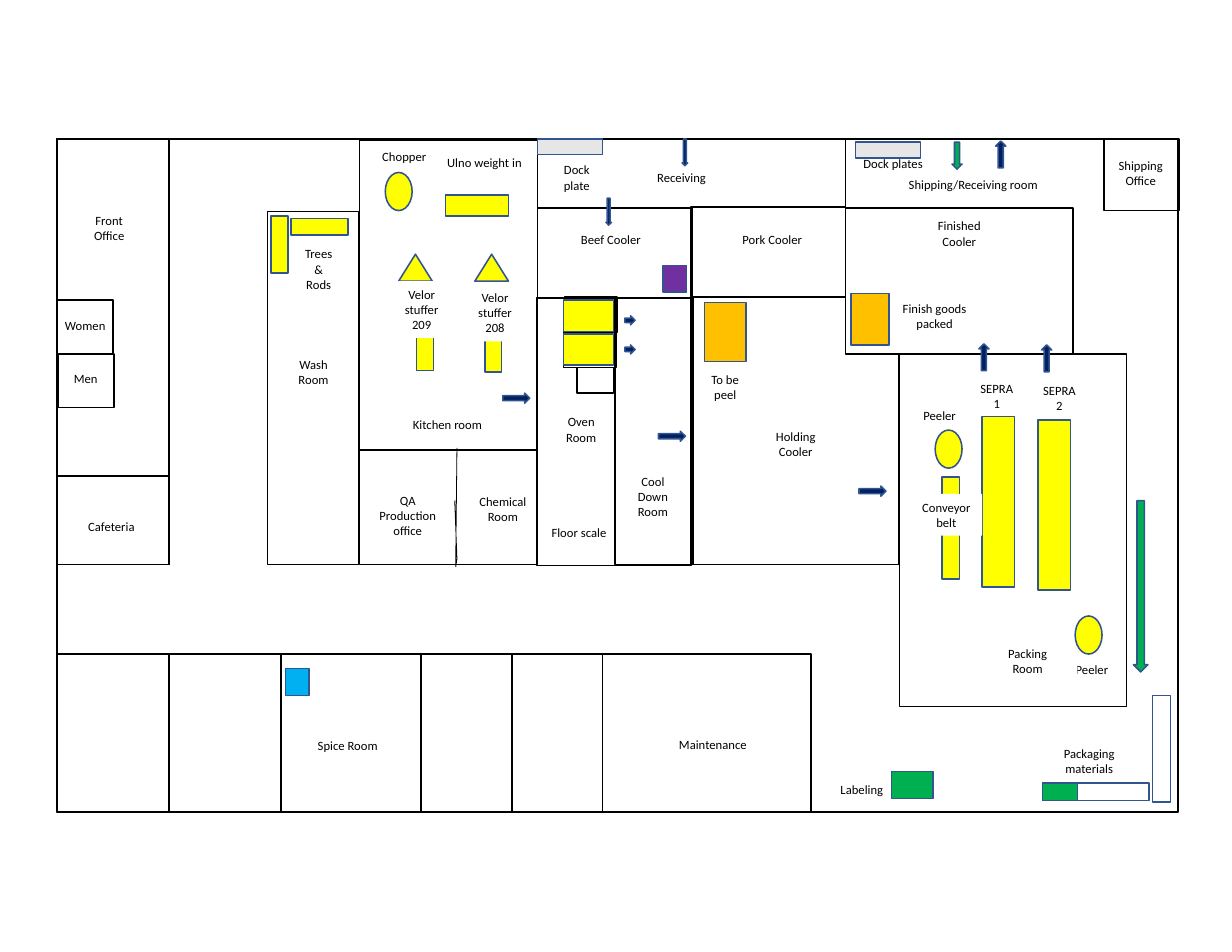
"""Build a one-slide floor plan of a meat plant on a grid of 110 columns by 85 rows."""
from lxml import etree
from pptx import Presentation
from pptx.dml.color import RGBColor
from pptx.enum.shapes import MSO_CONNECTOR, MSO_SHAPE
from pptx.enum.text import MSO_ANCHOR, MSO_AUTO_SIZE, PP_ALIGN
from pptx.oxml.ns import qn
from pptx.util import Inches, Pt

RECTANGLE = MSO_SHAPE.RECTANGLE
ELLIPSE = MSO_SHAPE.OVAL
TRIANGLE = MSO_SHAPE.ISOSCELES_TRIANGLE
DOWN, UP, RIGHT = MSO_SHAPE.DOWN_ARROW, MSO_SHAPE.UP_ARROW, MSO_SHAPE.RIGHT_ARROW
STRAIGHT = MSO_CONNECTOR.STRAIGHT
THEME = {
    "font": "Calibri", "size": Pt(8.1), "wall_width": Pt(1), "thin_width": Pt(0.5),
    "wall": "000000", "outline": "325491", "paper": "FFFFFF",
    "machine": "FFFF00", "goods": "FFC000", "dock": "E7E6E6", "flow": "002060",
    "packaging": "00B050", "bin": "7030A0", "spice": "00B0F0",
}

presentation = Presentation()
presentation.slide_width, presentation.slide_height = Inches(11), Inches(8.5)
slide = presentation.slides.add_slide(presentation.slide_layouts[6])
COLUMN = presentation.slide_width / 110
ROW = presentation.slide_height / 85


def add_block(kind, box, line, fill=None):
    left, top, width, height = box
    shape = slide.shapes.add_shape(
        kind, round(left * COLUMN), round(top * ROW), round(width * COLUMN), round(height * ROW))
    shape.shadow.inherit = False
    if fill:
        shape.fill.solid()
        shape.fill.fore_color.rgb = RGBColor.from_string(THEME[fill])
    else:
        shape.fill.background()
    shape.line.color.rgb = RGBColor.from_string(THEME[line])
    shape.line.width = THEME["wall_width"]


def add_label(text, left, top, width, fill=None, lines=1):
    height = 1 + 1.36 * lines
    shape = slide.shapes.add_textbox(
        round(left * COLUMN), round(top * ROW), round(width * COLUMN), round(height * ROW))
    if fill:
        shape.fill.solid()
        shape.fill.fore_color.rgb = RGBColor.from_string(THEME[fill])
    frame_format = {"word_wrap": True, "auto_size": MSO_AUTO_SIZE.SHAPE_TO_FIT_TEXT,
                    "vertical_anchor": MSO_ANCHOR.TOP, "text": text}
    for name, value in frame_format.items():
        setattr(shape.text_frame, name, value)
    for paragraph in shape.text_frame.paragraphs:
        paragraph.alignment = PP_ALIGN.CENTER
        for name, value in {"name": THEME["font"], "size": THEME["size"]}.items():
            setattr(paragraph.font, name, value)
        paragraph.font.color.rgb = RGBColor.from_string(THEME["wall"])


rooms = {
    "building": (5.1, 12.4, 100.1, 60.1),
    "front office": (5.1, 12.4, 10, 38),
    "cafeteria": (5.1, 42.5, 10, 7.9),
    "women": (5.1, 26.8, 5, 4.8),
    "men": (5.2, 31.6, 5, 4.8),
    "wash room": (23.9, 18.9, 8.1, 31.5),
    "kitchen": (32.1, 12.5, 15.9, 27.7),
    "offices": (32.1, 40.2, 15.9, 10.2),
    "oven room": (47.9, 26.6, 13.8, 23.9),
    "cool down room": (54.9, 26.6, 7, 23.8),
    "beef cooler": (48, 18.6, 13.8, 8),
    "pork cooler": (61.7, 18.5, 13.8, 8),
    "holding cooler": (61.7, 26.5, 18.6, 23.9),
    "upper oven": (50.4, 26.5, 4.7, 3.2),
    "lower oven": (50.3, 29.6, 4.7, 3.2),
    "oven step": (51.5, 32.8, 3.3, 2.3),
    "shipping office": (98.6, 12.4, 6.7, 6.4),
    "packing room": (80.3, 31.6, 20.3, 31.5),
}
for box in rooms.values():
    add_block(RECTANGLE, box, "wall")
add_block(RECTANGLE, (75.5, 18.6, 20.3, 13), "wall", "paper")

left = 5.1
for width in (10, 10, 12.5, 8.1, 8.1, 18.6):
    add_block(RECTANGLE, (left, 58.4, width, 14.1), "wall")
    left += width

divider = slide.shapes.add_connector(
    STRAIGHT, round(75.5 * COLUMN), round(12.4 * ROW), round(75.5 * COLUMN), round(18.6 * ROW))
etree.SubElement(divider._element.spPr, qn("a:effectLst"))
builder = slide.shapes.build_freeform(408, 400, scale=COLUMN / 10)
builder.add_line_segments([(407, 495), (407, 506), (408, 499), (406, 447)], close=False)
partition = builder.convert_to_shape()
partition.shadow.inherit = False
partition.fill.background()
for thin_wall in (divider, partition):
    thin_wall.line.color.rgb = RGBColor.from_string(THEME["wall"])
    thin_wall.line.width = THEME["thin_width"]

filled_labels = [
    ("Receiving", 56.4, 14.7, 8.9), ("Beef Cooler", 50.1, 20.2, 8.9),
    ("Pork Cooler", 64.5, 20.2, 8.9), ("Maintenance", 59.2, 65.3, 8.9),
    ("Spice Room", 26.6, 65.4, 8.9), ("Cafeteria", 5.5, 45.8, 8.9),
    ("Shipping/Receiving room", 80, 15.3, 13.8), ("Labeling", 72.5, 69.3, 8.9),
    ("Kitchen room", 35.5, 36.7, 8.9), ("Chopper", 32.9, 12.8, 6.4),
    ("Dock plates", 75.6, 13.4, 8.3), ("Peeler", 80.7, 35.9, 6.4),
    ("Peeler", 94.7, 58.6, 5.6),
]
two_line_labels = [
    ("Finished Cooler", 81.2, 19, 8.9), ("Holding\nCooler", 66.6, 37.8, 8.9),
    ("Wash\nRoom", 24.3, 31.4, 7.4), ("Packing\nRoom", 87.3, 57.2, 8.9),
    ("Front\nOffice", 5.3, 18.5, 8.9), ("Dock plate", 49.1, 14, 4.8),
    ("Ulno weight in", 38.8, 13.3, 8.9), ("SEPRA 1", 86.2, 33.5, 5.6),
    ("SEPRA 2", 91.8, 33.7, 5.6), ("Packaging materials", 92.8, 66.1, 8.9),
    ("To be peel", 62.3, 32.7, 4.9), ("Finish goods packed", 79.6, 26.4, 7.7),
]
for label in filled_labels:
    add_label(*label, fill="paper")
for label in two_line_labels:
    add_label(*label, fill="paper", lines=2)
add_label("QA\nProduction office", 32.8, 43.5, 7.2, "paper", 3)
add_label("Trees & Rods", 25.9, 21.5, 5.1, "paper", 3)

for label in [("Men", 5.2, 32.6, 4.9), ("Women", 4.5, 27.9, 6.2), ("Floor scale", 48, 46.4, 7.4)]:
    add_label(*label)
for label in [("Oven\nRoom", 48.2, 36.5, 7.4), ("Chemical\nRoom", 41.2, 43.6, 7.4),
              ("Shipping\nOffice", 97.4, 13.6, 8.9)]:
    add_label(*label, lines=2)
add_label("Cool\nDown\nRoom", 54.6, 41.8, 7.4, lines=3)

equipment = [
    (RECTANGLE, "spice", [(25.5, 59.7, 2.1, 2.4)]),
    (RECTANGLE, "bin", [(59.2, 23.7, 2.1, 2.4)]),
    (RECTANGLE, "dock", [(48, 12.4, 5.8, 1.4), (76.4, 12.7, 5.8, 1.4)]),
    (RECTANGLE, "goods", [(62.9, 27, 3.7, 5.3), (76, 26.2, 3.4, 4.6)]),
    (RECTANGLE, "packaging", [(79.6, 68.9, 3.7, 2.4), (93.1, 69.9, 3.1, 1.6)]),
    (RECTANGLE, None, [(102.9, 62.1, 1.6, 9.5), (93.1, 69.9, 9.5, 1.6)]),
    (RECTANGLE, "machine", [
        (39.8, 17.4, 5.6, 1.9), (37.2, 28, 1.5, 5.1), (43.3, 28.1, 1.5, 5.1),
        (50.3, 26.8, 4.5, 2.8), (50.3, 29.8, 4.5, 2.8), (84.1, 42.6, 1.6, 9.1),
        (87.7, 37.2, 2.9, 15.2), (92.7, 37.5, 2.9, 15.2),
        (24.2, 19.3, 1.5, 5.1), (26, 19.5, 5.1, 1.5)]),
    (ELLIPSE, "machine", [(34.4, 15.4, 2.4, 3.4), (83.5, 38.4, 2.4, 3.4), (96, 55, 2.4, 3.4)]),
    (TRIANGLE, "machine", [(35.6, 22.7, 3, 2.4), (42.4, 22.7, 3, 2.4)]),
    (DOWN, "flow", [(60.9, 12.4, 0.5, 2.4), (54.1, 17.7, 0.5, 2.4)]),
    (DOWN, "packaging", [(85, 12.7, 0.9, 2.4), (101.2, 44.7, 1.3, 15.3)]),
    (UP, "flow", [(88.9, 12.6, 0.9, 2.4), (87.4, 30.7, 0.9, 2.4), (93, 30.8, 0.9, 2.4)]),
    (RIGHT, "flow", [
        (44.9, 35.1, 2.4, 0.9), (58.8, 38.5, 2.4, 0.9), (76.7, 43.4, 2.4, 0.9),
        (55.8, 28.2, 0.9, 0.8), (55.8, 30.8, 0.9, 0.8)]),
]
for kind, fill, boxes in equipment:
    for box in boxes:
        add_block(kind, box, "outline", fill)

add_label("Velor stuffer 209", 34.7, 25.1, 5.9, "paper", 3)
add_label("Velor stuffer 208", 40.8, 25.4, 6.8, "paper", 3)
add_label("Conveyor belt", 81.3, 44.1, 6.4, "paper", 2)

presentation.save("out.pptx")
